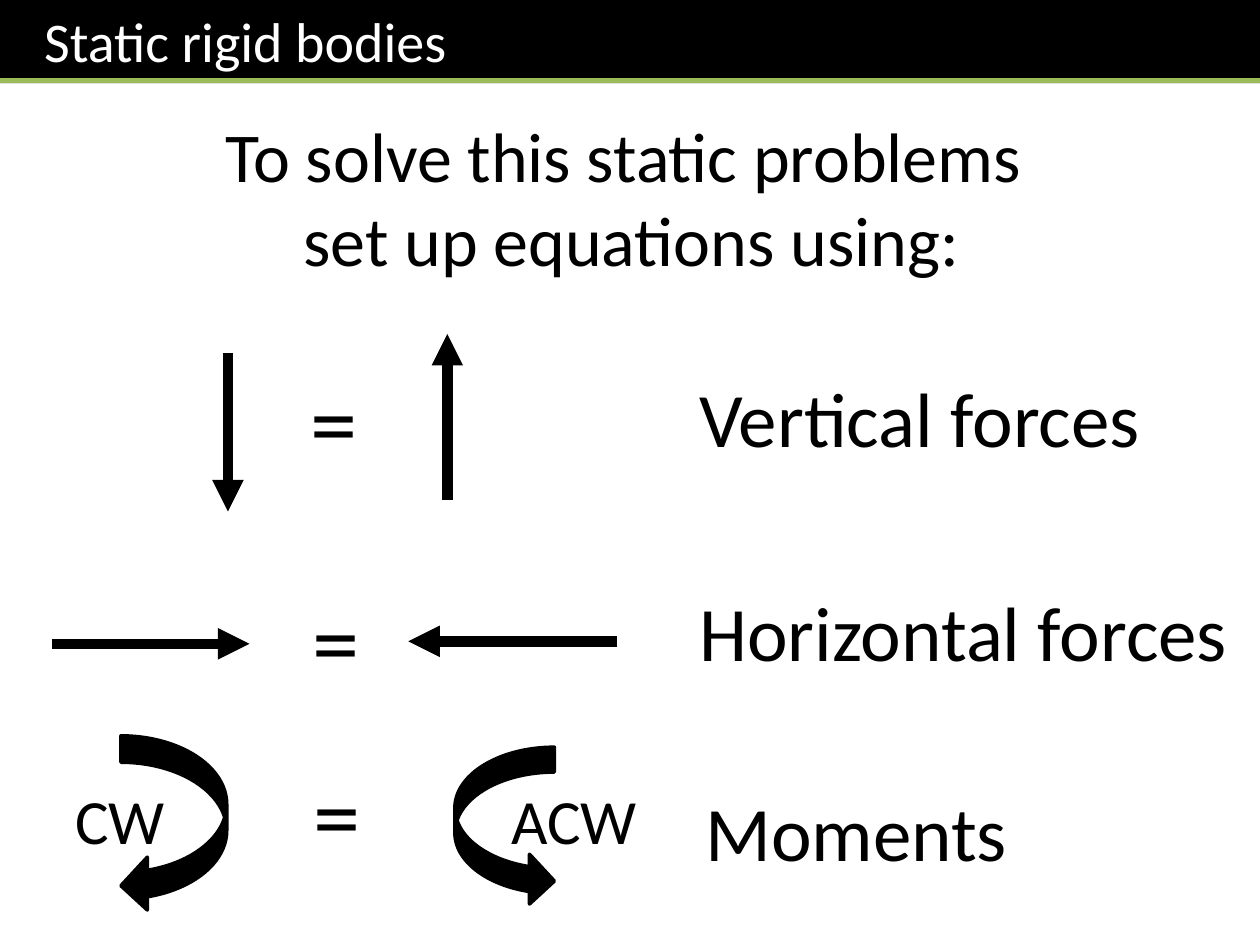
from lxml import etree
from pptx import Presentation
from pptx import util as u
from pptx.dml.color import RGBColor
from pptx.enum import shapes, text
from pptx.oxml.ns import qn

BLACK, WHITE, GREEN = "000000", "FFFFFF", "9BBB59"


def paint(color_format, hex_color):
    color_format.rgb = RGBColor.from_string(hex_color)


def fill(shape, hex_color):
    shape.fill.solid()
    paint(shape.fill.fore_color, hex_color)


class SlideBuilder:
    """Holds the style and the current slide; lengths are in points."""
    font = "Calibri"
    ink = BLACK

    def __init__(self, slide):
        self.slide = slide

    def set_words(self, frame, words, size, color, align):
        frame.text = words
        frame.word_wrap = True
        for paragraph in frame.paragraphs:
            paragraph.alignment = align
            for run in paragraph.runs:
                run.font.name = self.font
                run.font.size = u.Pt(size)
                paint(run.font.color, color)

    def title(self, words, width, height, size):
        bar = self.slide.shapes.title
        bar.left, bar.top = u.Pt(0), u.Pt(0)
        bar.width, bar.height = u.Pt(width), u.Pt(height)
        fill(bar, BLACK)
        frame = bar.text_frame
        self.set_words(frame, words, size, WHITE, text.PP_ALIGN.LEFT)
        frame.auto_size = text.MSO_AUTO_SIZE.NONE
        frame.vertical_anchor = text.MSO_ANCHOR.TOP
        frame.margin_left = u.Pt(25.2)

    def label(self, words, left, top, width, height, size, align=text.PP_ALIGN.LEFT):
        box = self.slide.shapes.add_textbox(*map(u.Pt, (left, top, width, height)))
        self.set_words(box.text_frame, words, size, self.ink, align)

    def line(self, start, end, color, weight):
        connector = self.slide.shapes.add_connector(
            shapes.MSO_CONNECTOR.STRAIGHT, *map(u.Pt, (*start, *end)))
        paint(connector.line.color, color)
        connector.line.width = u.Pt(weight)
        etree.SubElement(connector._element.spPr, qn("a:effectLst"))
        return connector

    def force(self, start, end):
        """Draw a force arrow with its head at the end point."""
        arrow = self.line(start, end, self.ink, 6)
        outline = arrow._element.spPr.find(qn("a:ln"))
        etree.SubElement(outline, qn("a:tailEnd"), type="triangle")

    def moment(self, kind, left, top, width, height):
        """Draw a curved arrow for a turning moment."""
        arrow = self.slide.shapes.add_shape(kind, *map(u.Pt, (left, top, width, height)))
        arrow.shadow.inherit = False
        fill(arrow, self.ink)
        paint(arrow.line.color, self.ink)
        arrow.line.width = u.Pt(2)


def main():
    deck = Presentation()
    deck.slide_width, deck.slide_height = u.Pt(720), u.Pt(540)
    page = SlideBuilder(deck.slides.add_slide(deck.slide_layouts[5]))

    page.title("Static rigid bodies", 720, 47.5, 32)
    page.line((0, 46.2), (720, 46.2), GREEN, 3)
    page.label("To solve this static problems \nset up equations using:",
               0.7, 60.5, 720, 104.4, 40, text.PP_ALIGN.CENTER)

    # name, label left / top / width, equals sign left / top
    balances = [
        ("Vertical forces", 392.4, 208, 278, 170.6, 203.8),
        ("Horizontal forces", 392.4, 330.5, 329, 171.4, 329),
        ("Moments", 396, 445, 197.3, 172.1, 428.4),
    ]
    for name, left, top, width, equals_left, equals_top in balances:
        page.label("=", equals_left, equals_top, 45.4, 72.7, 54)
        page.label(name, left, top, width, 60.5, 44)

    page.force((130.3, 201.6), (130.3, 292.3))
    page.force((255.6, 285.8), (255.6, 190.8))
    page.force((29.5, 367.9), (142.6, 367.9))
    page.force((352.8, 366.5), (233.3, 366.5))

    page.moment(shapes.MSO_SHAPE.CURVED_RIGHT_ARROW, 259.9, 427, 56.9, 90.7)
    page.moment(shapes.MSO_SHAPE.CURVED_LEFT_ARROW, 69.1, 420.5, 60.5, 100.8)
    page.label("CW", 36, 442.8, 75.6, 51.1, 36)
    page.label("ACW", 285.1, 442.8, 97.9, 51.1, 36)

    deck.save("out.pptx")


if __name__ == "__main__":
    main()
